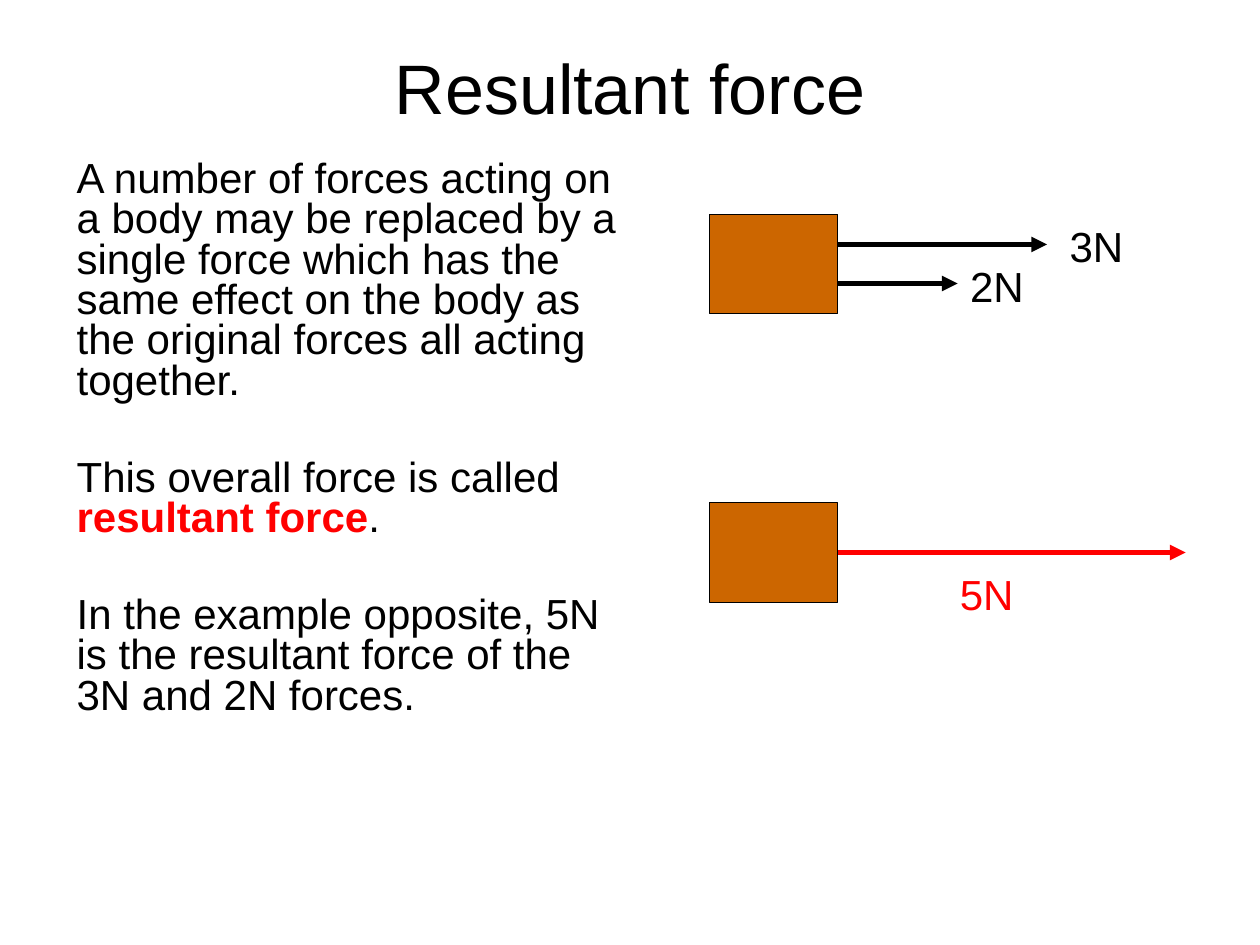
from dataclasses import dataclass

from lxml.etree import SubElement
from pptx import Presentation
from pptx.dml.color import RGBColor
from pptx.enum.shapes import MSO_CONNECTOR, MSO_SHAPE
from pptx.enum.text import MSO_ANCHOR, PP_ALIGN
from pptx.oxml.ns import qn
from pptx.util import Inches, Pt


@dataclass(frozen=True)
class Theme:
    font: str = "Arial"
    ink: RGBColor = RGBColor(0x00, 0x00, 0x00)
    resultant: RGBColor = RGBColor(0xFF, 0x00, 0x00)
    block: RGBColor = RGBColor(0xCC, 0x66, 0x00)
    title_size: Pt = Pt(40)
    body_size: Pt = Pt(24)
    paragraph_gap: Pt = Pt(32.4)
    outline: Pt = Pt(0.75)
    arrow: Pt = Pt(3)


@dataclass(frozen=True)
class Force:
    text: str
    drop: float
    length: float
    label_left: float
    label_top: float
    color: RGBColor


THEME = Theme()
EXPLANATION = [
    [("A number of forces acting on a body may be replaced by a single force "
      "which has the same effect on the body as the original forces all "
      "acting together.", False)],
    [("This overall force is called ", False), ("resultant force", True), (".", False)],
    [("In the example opposite, 5N is the resultant force of the 3N and 2N forces.", False)],
]
BLOCK_WIDTH, BLOCK_HEIGHT = 1.02, 0.79
SEPARATE_FORCES = [
    Force("3N", 0.24, 1.66, 2.76, 0, THEME.ink),
    Force("2N", 0.55, 0.95, 1.97, 0.32, THEME.ink),
]
COMBINED_FORCE = [
    Force("5N", BLOCK_HEIGHT / 2, 2.76, 1.89, 0.47, THEME.resultant),
]


def add_text_frame(shapes, left, top, width, height):
    frame = shapes.add_textbox(
        Inches(left), Inches(top), Inches(width), Inches(height)).text_frame
    frame.word_wrap = True
    return frame


def style(font, size, color):
    font.name = THEME.font
    font.size = size
    font.color.rgb = color


def add_title(slide, left, top, width, height):
    frame = add_text_frame(slide.shapes, left, top, width, height)
    frame.vertical_anchor = MSO_ANCHOR.MIDDLE
    title = frame.paragraphs[0]
    title.text = "Resultant force"
    title.alignment = PP_ALIGN.CENTER
    style(title.font, THEME.title_size, THEME.ink)


def add_explanation(slide, left, top, width, height):
    frame = add_text_frame(slide.shapes, left, top, width, height)
    for index, pieces in enumerate(EXPLANATION):
        paragraph = frame.paragraphs[0] if index == 0 else frame.add_paragraph()
        paragraph.line_spacing = 0.8
        paragraph.space_before = THEME.paragraph_gap if index else Pt(0)
        style(paragraph.font, THEME.body_size, THEME.ink)
        for text, is_term in pieces:
            run = paragraph.add_run()
            run.text = text
            if is_term:
                run.font.bold = True
                run.font.color.rgb = THEME.resultant


def add_force(shapes, block, left, top, force):
    start, level = left + BLOCK_WIDTH, top + force.drop
    arrow = shapes.add_connector(
        MSO_CONNECTOR.STRAIGHT, Inches(start), Inches(level),
        Inches(start + force.length), Inches(level))
    if force.drop == BLOCK_HEIGHT / 2:
        arrow.begin_connect(block, 3)
    arrow.line.color.rgb = force.color
    arrow.line.width = THEME.arrow
    SubElement(arrow.line._get_or_add_ln(), qn("a:tailEnd"), type="triangle")
    SubElement(arrow._element.spPr, qn("a:effectLst"))

    label = add_text_frame(
        shapes, left + force.label_left, top + force.label_top, 0.79, 0.5).paragraphs[0]
    label.text = force.text
    style(label.font, THEME.body_size, force.color)


def add_force_diagram(slide, left, top, forces):
    shapes = slide.shapes.add_group_shape().shapes
    block = shapes.add_shape(
        MSO_SHAPE.RECTANGLE, Inches(left), Inches(top),
        Inches(BLOCK_WIDTH), Inches(BLOCK_HEIGHT))
    block.shadow.inherit = False
    block.fill.solid()
    block.fill.fore_color.rgb = THEME.block
    block.line.color.rgb = THEME.ink
    block.line.width = THEME.outline
    for force in forces:
        add_force(shapes, block, left, top, force)


def main():
    presentation = Presentation()
    presentation.slide_width, presentation.slide_height = Inches(10), Inches(7.5)
    slide = presentation.slides.add_slide(presentation.slide_layouts[6])
    add_title(slide, 0.5, 0.3, 9, 0.77)
    add_explanation(slide, 0.51, 1.23, 4.49, 5.12)
    add_force_diagram(slide, 5.63, 1.7, SEPARATE_FORCES)
    add_force_diagram(slide, 5.63, 3.99, COMBINED_FORCE)
    presentation.save("out.pptx")


if __name__ == "__main__":
    main()
